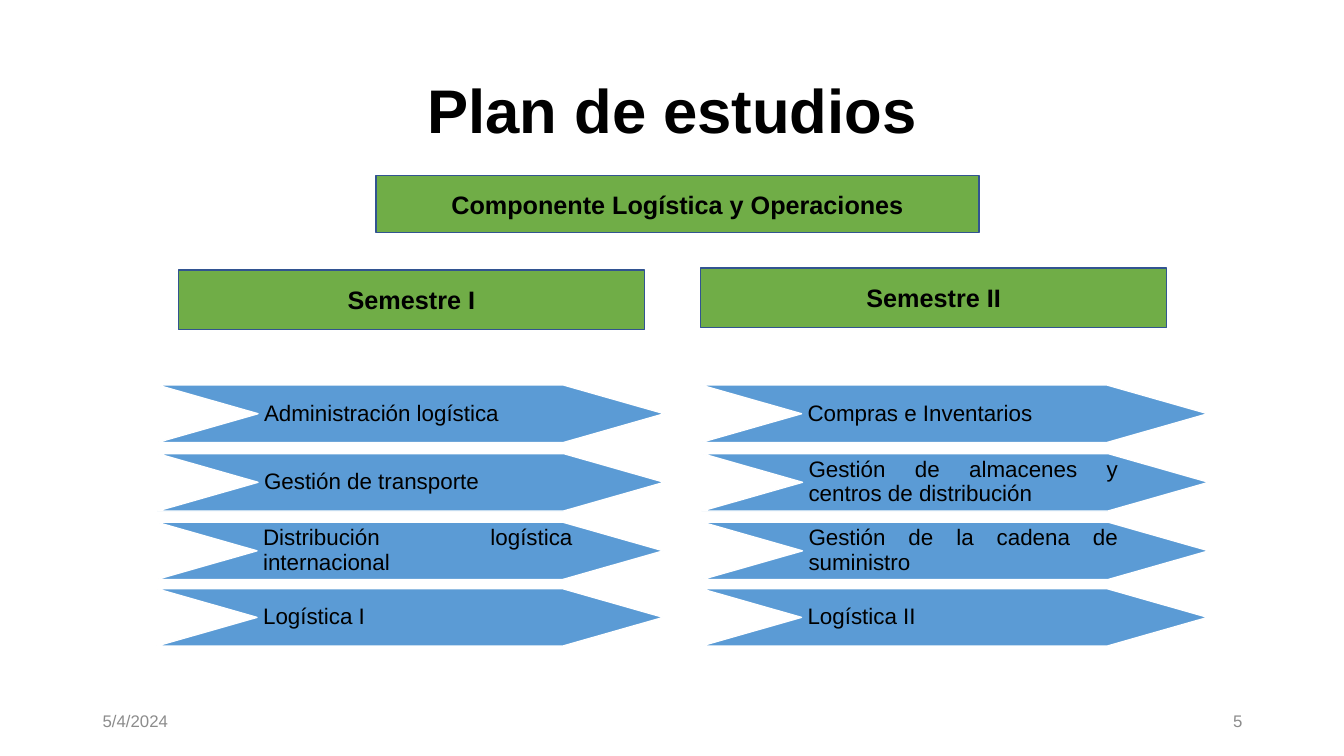
from pptx import Presentation
from pptx.dml.color import RGBColor
from pptx.enum.shapes import MSO_SHAPE
from pptx.enum.text import MSO_ANCHOR, PP_ALIGN
from pptx.util import Inches, Pt

BLACK = RGBColor(0x00, 0x00, 0x00)
WHITE = RGBColor(0xFF, 0xFF, 0xFF)
GRAY = RGBColor(0x8C, 0x8C, 0x8C)
GREEN = RGBColor(0x70, 0xAD, 0x47)
NAVY = RGBColor(0x32, 0x54, 0x91)
BLUE = RGBColor(0x5B, 0x9B, 0xD5)

ARROW_WIDTH, ARROW_HEIGHT, ARROW_POINT = 5.03, 0.57, 1.0
ROW_TOPS = [3.82, 4.5, 5.18, 5.84]

# Left edge of each arrow with its course, from top to bottom
SEMESTER_ONE = [
    (1.56, "Administración logística"),
    (1.56, "Gestión de transporte"),
    (1.55, "Distribución logística internacional"),
    (1.55, "Logística I"),
]
SEMESTER_TWO = [
    (6.95, "Compras e Inventarios"),
    (6.96, "Gestión de almacenes y centros de distribución"),
    (6.96, "Gestión de la cadena de suministro"),
    (6.95, "Logística II"),
]


def write_text(shape, text, size, color=BLACK, bold=False,
               align=PP_ALIGN.LEFT, line_spacing=None):
    frame = shape.text_frame
    frame.word_wrap = True
    frame.vertical_anchor = MSO_ANCHOR.MIDDLE
    frame.text = text
    paragraph = frame.paragraphs[0]
    paragraph.alignment = align
    paragraph.line_spacing = line_spacing
    font = paragraph.runs[0].font
    font.name = "Arial"
    font.size = Pt(size)
    font.bold = bold
    font.color.rgb = color


def paint(shape, fill, line):
    shape.shadow.inherit = False
    shape.fill.solid()
    shape.fill.fore_color.rgb = fill
    shape.line.color.rgb = line
    shape.line.width = Pt(1)


def add_label(page, left, top, width, height, text, size, **style):
    box = page.shapes.add_textbox(
        Inches(left), Inches(top), Inches(width), Inches(height))
    write_text(box, text, size, **style)


def add_heading(page, left, top, width, height, text):
    box = page.shapes.add_shape(
        MSO_SHAPE.RECTANGLE,
        Inches(left), Inches(top), Inches(width), Inches(height))
    paint(box, GREEN, NAVY)
    write_text(box, text, 18, bold=True, align=PP_ALIGN.CENTER)


def add_course(page, left, top, text):
    right, bottom = left + ARROW_WIDTH, top + ARROW_HEIGHT
    middle = top + ARROW_HEIGHT / 2
    outline = [
        (right - ARROW_POINT, top),
        (right, middle),
        (right - ARROW_POINT, bottom),
        (left, bottom),
        (left + ARROW_POINT, middle),
    ]
    builder = page.shapes.build_freeform(Inches(left), Inches(top))
    builder.add_line_segments(
        [(Inches(x), Inches(y)) for x, y in outline], close=True)
    arrow = builder.convert_to_shape()
    paint(arrow, BLUE, WHITE)
    frame = arrow.text_frame
    frame.margin_left, frame.margin_right = Inches(1.06), Inches(0.9)
    frame.margin_top = frame.margin_bottom = Inches(0.08)
    write_text(arrow, text, 16, align=PP_ALIGN.JUSTIFY, line_spacing=0.9)


def main():
    deck = Presentation()
    deck.slide_width, deck.slide_height = Inches(13.33), Inches(7.5)
    page = deck.slides.add_slide(deck.slide_layouts[6])

    # Footer
    add_label(page, 0.92, 6.95, 3, 0.4, "5/4/2024", 12, color=GRAY)
    add_label(page, 9.42, 6.95, 3, 0.4, "5", 12, color=GRAY,
              align=PP_ALIGN.RIGHT)

    # Title
    add_label(page, 0.92, 0.4, 11.5, 1.45, "Plan de estudios", 44,
              bold=True, align=PP_ALIGN.CENTER, line_spacing=0.9)

    # Component and semester headings
    add_heading(page, 3.73, 1.74, 5.98, 0.57,
                "Componente Logística y Operaciones")
    add_heading(page, 6.95, 2.66, 4.62, 0.59, "Semestre II")
    add_heading(page, 1.77, 2.68, 4.62, 0.59, "Semestre I")

    # Courses of each semester
    for courses in (SEMESTER_ONE, SEMESTER_TWO):
        for top, (left, course) in zip(ROW_TOPS, courses):
            add_course(page, left, top, course)

    deck.save("out.pptx")


if __name__ == "__main__":
    main()
